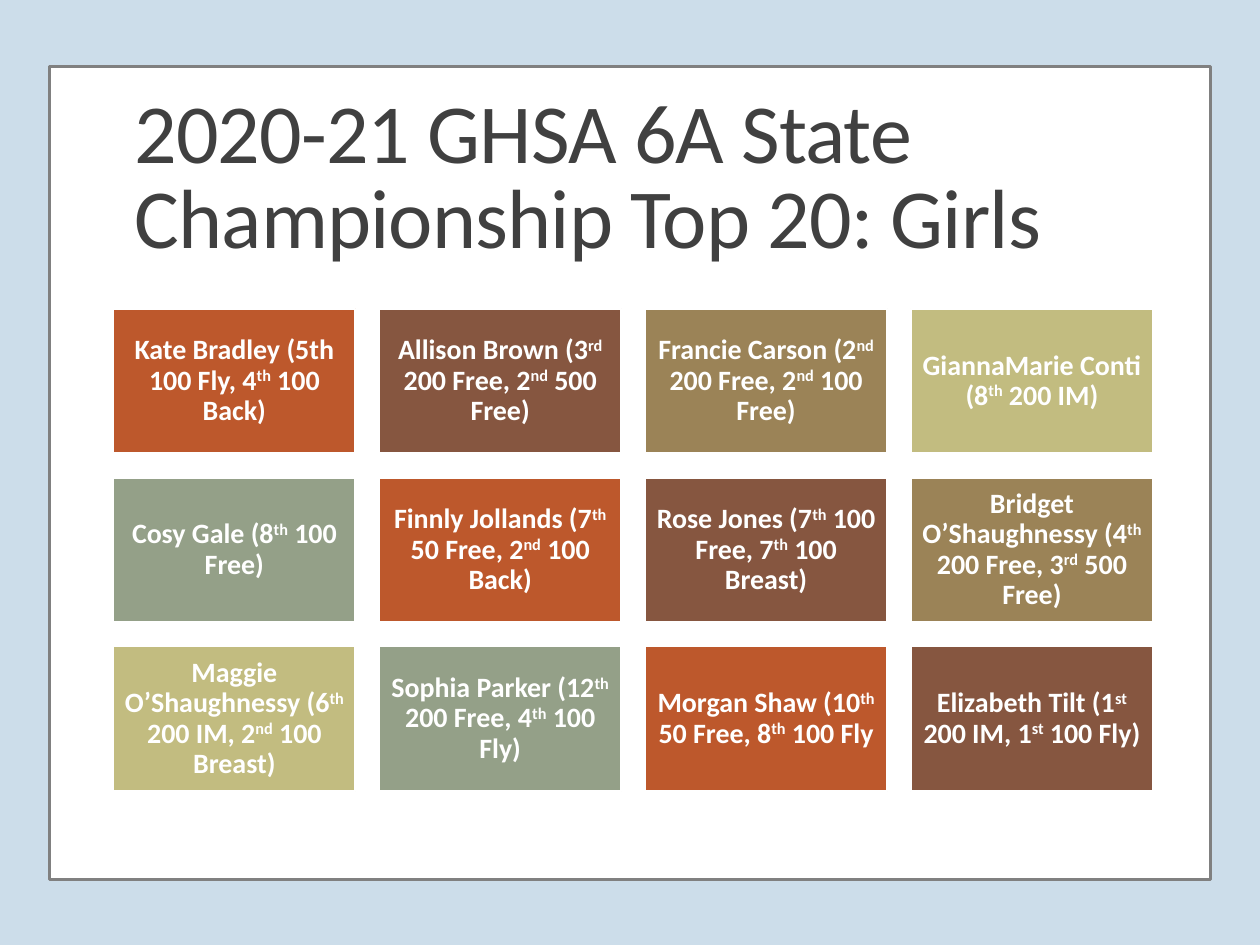
"""Build the slide of girls' top 20 finishes at the state swimming championship."""
from pptx import Presentation
from pptx.dml.color import RGBColor
from pptx.enum.shapes import MSO_SHAPE as Shape
from pptx.enum.text import MSO_ANCHOR as Anchor, PP_ALIGN as Align
from pptx.util import Inches, Pt

COLORS = {
    "backdrop": "CCDDEA", "white": "FFFFFF", "border": "808080", "title": "404040",
    "rust": "BD582C", "brown": "865640", "tan": "9B8357", "olive": "C2BC80", "sage": "94A088",
}
CARD_FILLS = ["rust", "brown", "tan", "olive", "sage"]
SWIMMERS = [
    "Kate Bradley (5th 100 Fly, 4^th^ 100 Back)",
    "Allison Brown (3^rd^ 200 Free, 2^nd^ 500 Free)",
    "Francie Carson (2^nd^ 200 Free, 2^nd^ 100 Free)",
    "GiannaMarie Conti (8^th^ 200 IM)",
    "Cosy Gale (8^th^ 100 Free)",
    "Finnly Jollands (7^th^ 50 Free, 2^nd^ 100 Back)",
    "Rose Jones (7^th^ 100 Free, 7^th^ 100 Breast)",
    "Bridget O’Shaughnessy (4^th^ 200 Free, 3^rd^ 500 Free)",
    "Maggie O’Shaughnessy (6^th^ 200 IM, 2^nd^ 100 Breast)",
    "Sophia Parker (12^th^ 200 Free, 4^th^ 100 Fly)",
    "Morgan Shaw (10^th^ 50 Free, 8^th^ 100 Fly",
    "Elizabeth Tilt (1^st^ 200 IM, 1^st^ 100 Fly)",
]


def add_box(left, top, width, height, fill, line, line_width):
    box = slide.shapes.add_shape(
        Shape.RECTANGLE, Inches(left), Inches(top), Inches(width), Inches(height))
    box.shadow.inherit = False
    box.fill.solid()
    box.fill.fore_color.rgb = RGBColor.from_string(COLORS[fill])
    box.line.color.rgb = RGBColor.from_string(COLORS[line])
    box.line.width = Pt(line_width)
    return box


def add_run(paragraph, text, size, color, bold=False):
    run = paragraph.add_run()
    run.text = text
    run.font.name = "Calibri"
    run.font.size = Pt(size)
    run.font.bold = bold
    run.font.color.rgb = RGBColor.from_string(COLORS[color])
    return run.font._element


deck = Presentation()
deck.slide_width, deck.slide_height = Inches(10), Inches(7.5)
slide = deck.slides.add_slide(deck.slide_layouts[6])
slide.background.fill.solid()
slide.background.fill.fore_color.rgb = RGBColor.from_string(COLORS["backdrop"])

add_box(0.39, 0.53, 9.22, 6.45, "white", "border", 1.75)

heading = slide.shapes.add_textbox(
    Inches(0.97), Inches(0.57), Inches(8.25), Inches(1.59)).text_frame
heading.word_wrap = True
heading.vertical_anchor = Anchor.BOTTOM
heading.paragraphs[0].line_spacing = 0.85
heading_props = add_run(
    heading.paragraphs[0], "2020-21 GHSA 6A State Championship Top 20: Girls", 48, "title")
heading_props.set("spc", "-50")

for index, swimmer in enumerate(SWIMMERS):
    row, column = divmod(index, 4)
    card = add_box(0.9 + 2.11 * column, 2.45 + 1.34 * row, 1.92, 1.15,
                   CARD_FILLS[index % len(CARD_FILLS)], "white", 1.25)
    result = card.text_frame
    result.word_wrap = True
    result.vertical_anchor = Anchor.MIDDLE
    result.margin_left = result.margin_right = Inches(0.07)
    result.margin_top = result.margin_bottom = Inches(0.07)
    entry = result.paragraphs[0]
    entry.alignment = Align.CENTER
    entry.line_spacing = 0.9
    for part, text in enumerate(swimmer.split("^")):
        run_props = add_run(entry, text, 16, "white", bold=True)
        if part % 2:
            run_props.set("baseline", "30000")

deck.save("out.pptx")
